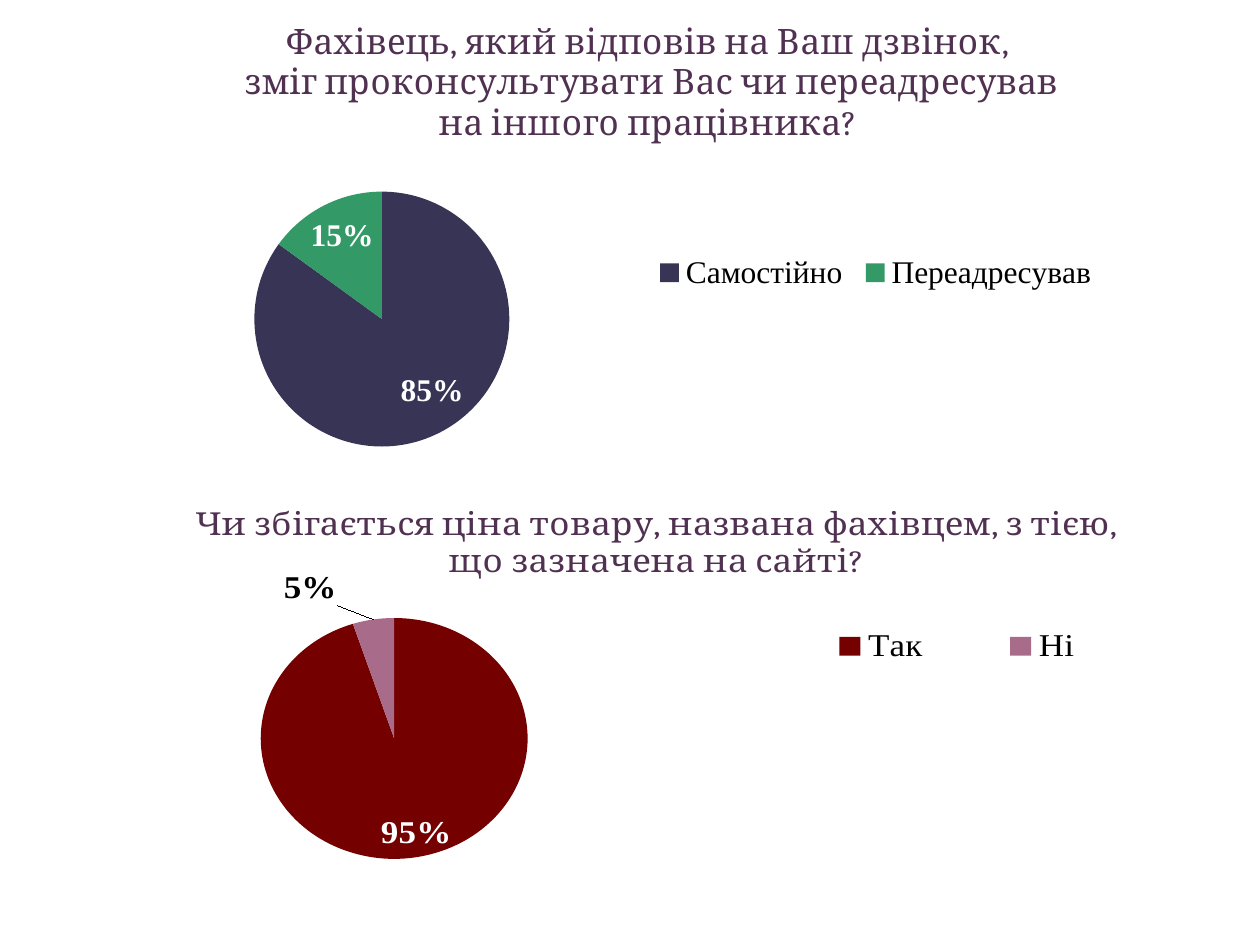
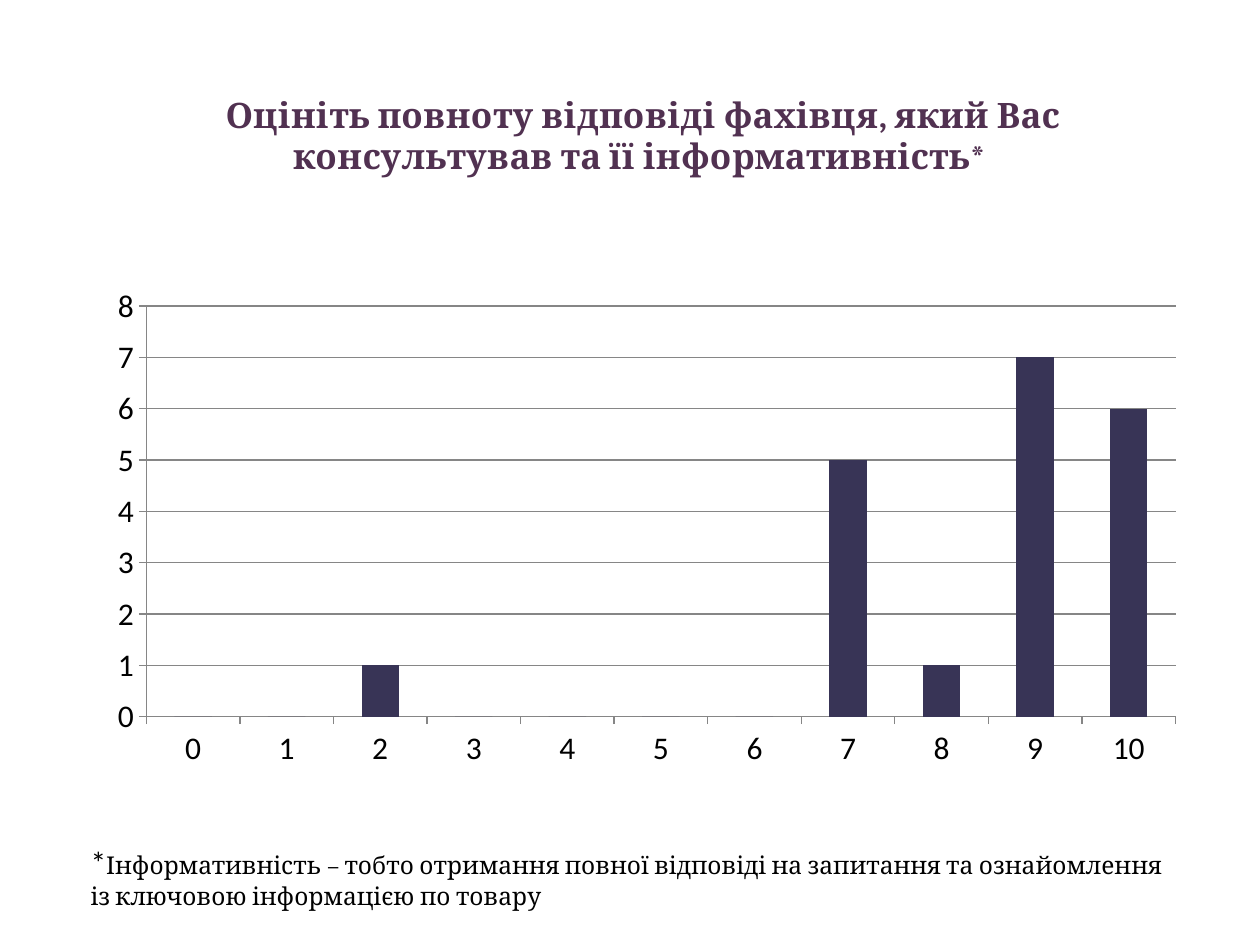
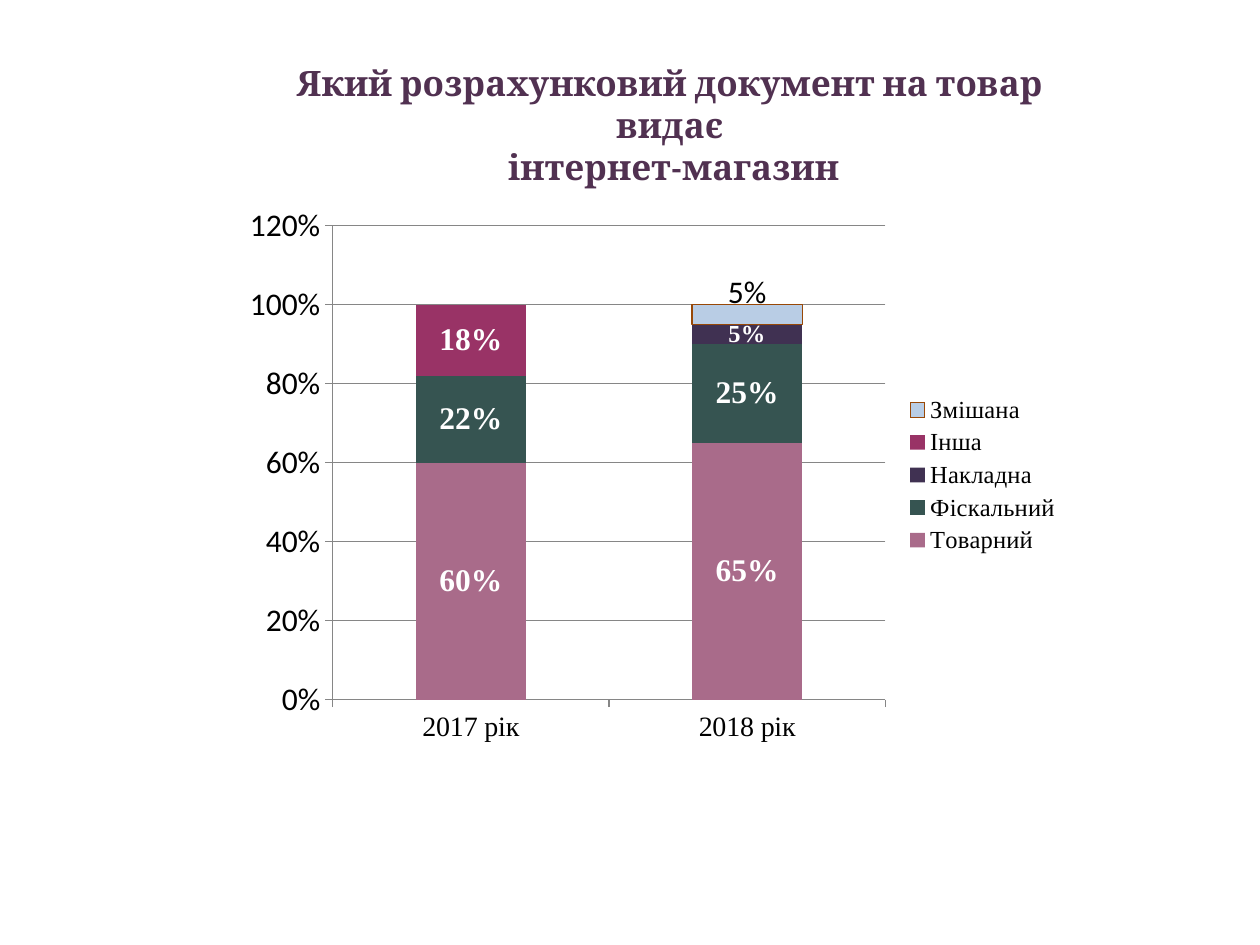
from dataclasses import dataclass

from lxml import etree
from pptx import Presentation
from pptx.chart.data import CategoryChartData
from pptx.dml.color import RGBColor
from pptx.enum import chart as chart_enum
from pptx.enum import text as text_enum
from pptx.oxml import ns
from pptx.util import Pt


@dataclass(frozen=True)
class Theme:
    title: str = "513151"
    black: str = "000000"
    white: str = "FFFFFF"
    axis: str = "868686"
    navy: str = "383456"
    green: str = "339966"
    maroon: str = "740000"
    mauve: str = "A96B8A"
    pine: str = "365451"
    violet: str = "403152"
    raspberry: str = "993366"
    sky: str = "B9CDE5"
    rust: str = "984807"
    title_font: str = "Cambria"
    body_font: str = "Calibri"
    label_font: str = "Times New Roman"
    title_size: int = 20
    body_size: int = 18
    axis_size: int = 16
    small_size: int = 14


THEME = Theme()
TITLE_STYLE = (THEME.title_font, THEME.title_size, THEME.title)


# Shared styling
def style_font(font, name, size, color, bold=False):
    font.name = name
    font.size = Pt(size)
    font.color.rgb = RGBColor.from_string(color)
    font.bold = bold


def fill_solid(chart_format, color):
    chart_format.fill.solid()
    chart_format.fill.fore_color.rgb = RGBColor.from_string(color)


def set_line(chart_format, color):
    chart_format.line.color.rgb = RGBColor.from_string(color)
    chart_format.line.width = Pt(0.75)


# Chart XML: manual layouts and data labels
def make_layout(target=None, modes=True, **measures):
    layout = etree.Element(ns.qn("c:layout"))
    manual = etree.SubElement(layout, ns.qn("c:manualLayout"))
    settings = {"layoutTarget": target} if target else {}
    if modes:
        settings.update(xMode="edge", yMode="edge")
    settings.update(measures)
    for tag, value in settings.items():
        etree.SubElement(manual, ns.qn(f"c:{tag}")).set("val", str(value))
    return layout


def place_part(chart, part, after, layout):
    """Give a title, legend or plot area a manual layout."""
    element = chart.element.find(f".//{ns.qn('c:' + part)}")
    for old in element.findall(ns.qn("c:layout")):
        element.remove(old)
    previous = element.find(ns.qn(f"c:{after}")) if after else None
    element.insert(0 if previous is None else element.index(previous) + 1, layout)


def find_label(series, index):
    """Return the XML of one point's data label."""
    labels = series.data_labels._element
    return next(label for label in labels.findall(ns.qn("c:dLbl"))
                if label.find(ns.qn("c:idx")).get("val") == str(index))


def shift_label(series, index, x, y):
    find_label(series, index).insert(1, make_layout(modes=False, x=x, y=y))


def hide_label(series, index):
    series.points[index].data_label.position = chart_enum.XL_LABEL_POSITION.CENTER
    label = find_label(series, index)
    for child in list(label)[1:]:
        label.remove(child)
    etree.SubElement(label, ns.qn("c:delete")).set("val", "1")


# Chart parts
def add_chart(slide, kind, box, categories, series, number_format="General"):
    data = CategoryChartData(number_format=number_format)
    data.categories = categories
    for name, values in series:
        data.add_series(name, values)
    chart = slide.shapes.add_chart(kind, *map(Pt, box), data).chart
    style_font(chart.font, THEME.body_font, THEME.body_size, THEME.black)
    chart.has_title = False
    chart.has_legend = False
    chart.plots[0].vary_by_categories = False
    return chart


def add_chart_title(chart, lines, x, y, bold=False, mark=""):
    chart.has_title = True
    frame = chart.chart_title.text_frame
    frame.text = "\n".join(lines)
    for paragraph in frame.paragraphs:
        for run in paragraph.runs:
            style_font(run.font, *TITLE_STYLE, bold)
    if mark:
        run = frame.paragraphs[-1].add_run()
        run.text = mark
        style_font(run.font, *TITLE_STYLE)
    chart.chart_title.include_in_layout = False
    place_part(chart, "title", "tx", make_layout(x=x, y=y))


def add_legend(chart, position, size, box=None):
    chart.has_legend = True
    chart.legend.position = position
    chart.legend.include_in_layout = False
    style_font(chart.legend.font, THEME.label_font, size, THEME.black)
    if box:
        place_part(chart, "legend", "legendPos", make_layout(**dict(zip("xywh", box))))


def place_plot(chart, box):
    place_part(chart, "plotArea", None,
               make_layout(target="inner", **dict(zip("xywh", box))))


def style_axes(chart):
    for axis in (chart.category_axis, chart.value_axis):
        axis.major_tick_mark = chart_enum.XL_TICK_MARK.OUTSIDE
        axis.minor_tick_mark = chart_enum.XL_TICK_MARK.NONE
        set_line(axis.format, THEME.axis)
    chart.value_axis.has_major_gridlines = True
    set_line(chart.value_axis.major_gridlines.format, THEME.axis)
    chart.plots[0].gap_width = 150


def add_pie(slide, box, name, slices, plot_box, legend_box, size):
    """Each slice is (category, value, colour, label colour, label shift)."""
    chart = add_chart(slide, chart_enum.XL_CHART_TYPE.PIE, box,
                      [item[0] for item in slices],
                      [(name, [item[1] for item in slices])])
    chart.plots[0].vary_by_categories = True
    place_plot(chart, plot_box)
    add_legend(chart, chart_enum.XL_LEGEND_POSITION.TOP, size, legend_box)
    series = chart.plots[0].series[0]
    labels = series.data_labels
    labels.show_value = False
    labels.show_percentage = True
    style_font(labels.font, THEME.label_font, size, THEME.black, True)
    for index, (_, _, color, label_color, shift) in enumerate(slices):
        point = series.points[index]
        fill_solid(point.format, color)
        style_font(point.data_label.font, THEME.label_font, size, label_color, True)
        point.data_label.position = chart_enum.XL_LABEL_POSITION.BEST_FIT
        shift_label(series, index, *shift)
        label = find_label(series, index)
        label.find(ns.qn("c:showVal")).set("val", "0")
        label.find(ns.qn("c:showPercent")).set("val", "1")
    leader = labels._element.find(ns.qn("c:showLeaderLines"))
    if leader is None:
        leader = etree.SubElement(labels._element, ns.qn("c:showLeaderLines"))
    leader.set("val", "1")
    return chart


# Text
def add_text(slide, box, paragraphs, align):
    """Each paragraph is a list of (text, font, size, colour, bold)."""
    frame = slide.shapes.add_textbox(*map(Pt, box)).text_frame
    frame.word_wrap = True
    for index, runs in enumerate(paragraphs):
        paragraph = frame.paragraphs[0] if index == 0 else frame.add_paragraph()
        paragraph.alignment = align
        for words, *style in runs:
            run = paragraph.add_run()
            run.text = words
            style_font(run.font, *style)


# Slides
def build_call_slide(slide):
    consult = add_pie(
        slide, (48.24, 0, 606.96, 311.76), "Series 1",
        [("Самостійно", 85, THEME.navy, THEME.white, (-0.04, -0.12)),
         ("Переадресував", 15, THEME.green, THEME.white, (0.05, 0.1))],
        (0.16, 0.35, 0.24, 0.47), (0.53, 0.46, 0.43, 0.08), THEME.body_size)
    add_chart_title(consult, ["Фахівець, який відповів на Ваш дзвінок,",
                              " зміг проконсультувати Вас чи переадресував "
                              "на іншого працівника?"], 0.14, 0.03)

    question = ("Чи збігається ціна товару, названа фахівцем, з тією, "
                "що зазначена на сайті?")
    price = add_pie(
        slide, (41, 275.76, 670, 238.32), question,
        [("Так", 95, THEME.maroon, THEME.white, (-0.03, -0.13)),
         ("Ні", 5, THEME.mauve, THEME.black, (-0.03, -0.02))],
        (0.16, 0.36, 0.23, 0.64), (0.59, 0.37, 0.33, 0.13), THEME.title_size)
    add_chart_title(price, [question], 0.1, 0.04)


def build_rating_slide(slide):
    chart = add_chart(slide, chart_enum.XL_CHART_TYPE.COLUMN_CLUSTERED,
                      (33.84, 39.6, 663.84, 416.16),
                      [str(score) for score in range(11)],
                      [("Series 1", (0, 0, 1, 0, 0, 0, 0, 5, 1, 7, 6))])
    style_axes(chart)
    fill_solid(chart.plots[0].series[0].format, THEME.navy)
    place_plot(chart, (0.075, 0.325, 0.886, 0.564))
    add_chart_title(chart, ["Оцініть повноту відповіді фахівця, який Вас "
                            "консультував та її інформативність"],
                    0.14, 0.03, bold=True, mark="* ")
    footnote = [("*", THEME.body_font, THEME.body_size, THEME.black),
                ("Інформативність – тобто отримання повної відповіді на запитання "
                 "та ознайомлення із ключовою інформацією по товару",
                 THEME.title_font, THEME.small_size, THEME.black)]
    add_text(slide, (44.64, 478.08, 630, 46.08), [footnote], text_enum.PP_ALIGN.LEFT)


def build_document_slide(slide):
    documents = [  # name, shares by year, colour, label size
        ("Товарний", (0.6, 0.65), THEME.mauve, THEME.body_size),
        ("Фіскальний", (0.22, 0.25), THEME.pine, THEME.body_size),
        ("Накладна", (0, 0.05), THEME.violet, THEME.small_size),
        ("Інша", (0.18, 0), THEME.raspberry, THEME.body_size),
        ("Змішана", (0, 0.05), THEME.sky, THEME.body_size),
    ]
    chart = add_chart(slide, chart_enum.XL_CHART_TYPE.COLUMN_STACKED,
                      (133.2, 111.6, 480.24, 319.68), ["2017 рік", "2018 рік"],
                      [item[:2] for item in documents], "0%")
    style_axes(chart)
    chart.plots[0].overlap = 100
    chart.value_axis.tick_labels.number_format = "0%"
    chart.value_axis.tick_labels.number_format_is_linked = False
    style_font(chart.category_axis.tick_labels.font, THEME.label_font,
               THEME.axis_size, THEME.black)
    add_legend(chart, chart_enum.XL_LEGEND_POSITION.RIGHT, THEME.small_size)

    for series, (_, shares, color, size) in zip(chart.plots[0].series, documents):
        fill_solid(series.format, color)
        labels = series.data_labels
        labels.show_value = True
        labels.number_format = "0%"
        labels.number_format_is_linked = False
        labels.position = chart_enum.XL_LABEL_POSITION.CENTER
        style_font(labels.font, THEME.label_font, size, THEME.white, True)
        for index, share in enumerate(shares):
            if share == 0:
                hide_label(series, index)

    # The pale top segment has an outline and a label above it
    mixed = chart.plots[0].series[-1]
    set_line(mixed.format, THEME.rust)
    style_font(mixed.data_labels.font, THEME.body_font, THEME.body_size, THEME.black)
    label = mixed.points[1].data_label
    style_font(label.font, THEME.body_font, THEME.body_size, THEME.black)
    label.position = chart_enum.XL_LABEL_POSITION.CENTER
    shift_label(mixed, 1, 0, -0.04)

    add_text(slide, (133.2, 31.68, 498.96, 55.44),
             [[(line, *TITLE_STYLE, True)] for line in
              ("Який розрахунковий документ на товар видає", " інтернет-магазин")],
             text_enum.PP_ALIGN.CENTER)


def main():
    presentation = Presentation()
    presentation.slide_width, presentation.slide_height = Pt(720), Pt(540)
    for build in (build_call_slide, build_rating_slide, build_document_slide):
        build(presentation.slides.add_slide(presentation.slide_layouts[6]))
    presentation.save("out.pptx")


if __name__ == "__main__":
    main()
